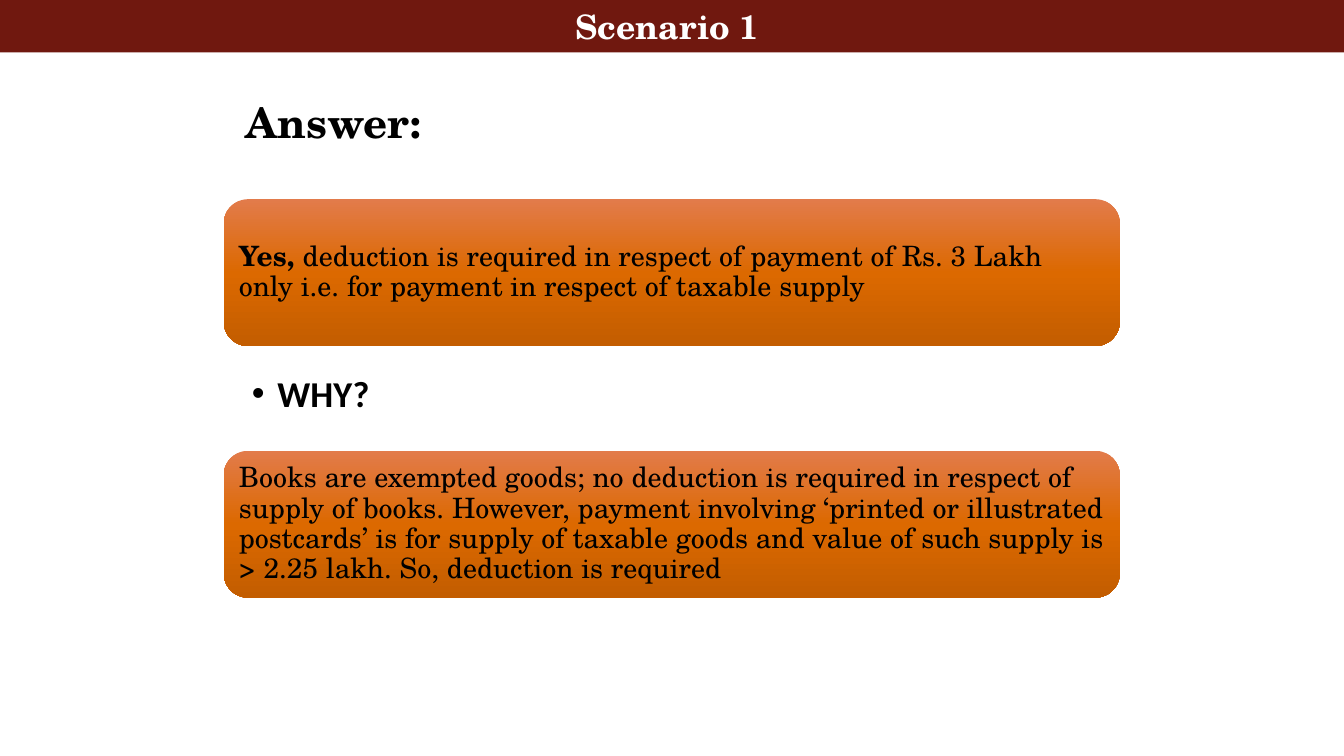
import copy
from dataclasses import dataclass

import pptx
import pptx.util
import pptx.dml.color
import pptx.enum.shapes
import pptx.enum.text
import pptx.oxml.ns
from lxml import etree

Cm = pptx.util.Cm
Pt = pptx.util.Pt
RGB = pptx.dml.color.RGBColor.from_string
SHAPE = pptx.enum.shapes.MSO_SHAPE
ALIGN = pptx.enum.text.PP_ALIGN
ANCHOR = pptx.enum.text.MSO_ANCHOR


@dataclass(frozen=True)
class Theme:
    serif: str = "TeX Gyre Schola"
    sans: str = "Calibri"
    ink: str = "000000"
    white: str = "FFFFFF"
    band: str = "70180F"
    card: tuple = ("E27B4B", "DC6900", "C35D00")
    head: int = 30
    why: int = 26
    top: int = 24
    text: int = 20


THEME = Theme()


def place(shape, box):
    shape.left, shape.top, shape.width, shape.height = map(Cm, box)


def frame(shape, inset, anchor):
    text = shape.text_frame
    text.word_wrap = True
    text.auto_size = pptx.enum.text.MSO_AUTO_SIZE.NONE
    text.vertical_anchor = anchor
    text.margin_left, text.margin_top, text.margin_right, text.margin_bottom = map(Cm, inset)
    return text.paragraphs[0]


def style(para, size, name=THEME.serif, color=THEME.ink, bold=None,
          align=ALIGN.LEFT, line=0.9, after=0):
    para.alignment = align
    para.line_spacing = line
    para.space_before = Pt(0)
    para.space_after = Pt(after)
    font = para.font
    font.name, font.size, font.bold = name, Pt(size), bold
    font.color.rgb = RGB(color)


def add_shape(slide, kind, box):
    shape = slide.shapes.add_shape(kind, *map(Cm, box))
    shape.shadow.inherit = False
    shape.line.fill.background()
    return shape


# Band across the top
def add_band(slide, box, words):
    band = add_shape(slide, SHAPE.RECTANGLE, box)
    band.fill.solid()
    band.fill.fore_color.rgb = RGB(THEME.band)
    para = frame(band, (0, 0.15, 0, 0.15), ANCHOR.MIDDLE)
    para.text = words
    style(para, THEME.top, color=THEME.white, bold=True, align=ALIGN.CENTER, line=1)


# Heading in the title placeholder
def add_head(slide, box, words):
    head = slide.shapes.title
    place(head, box)
    para = frame(head, (0.25, 0.13, 0.25, 0.13), ANCHOR.MIDDLE)
    para.text = words
    style(para, THEME.head, bold=True)


# Rounded card with a three-stop gradient
def add_card(slide, box, runs):
    card = add_shape(slide, SHAPE.ROUNDED_RECTANGLE, box)
    card.fill.gradient()
    card.fill.gradient_angle = 270
    first = card.element.find(".//" + pptx.oxml.ns.qn("a:gs"))
    first.addnext(copy.deepcopy(first))
    for i, (stop, color) in enumerate(zip(card.fill.gradient_stops, THEME.card)):
        stop.position = i / 2
        stop.color.rgb = RGB(color)
    para = frame(card, (0.2,) * 4, ANCHOR.MIDDLE)
    style(para, THEME.text, after=7)
    for words, bold in runs:
        run = para.add_run()
        run.text = words
        run.font.bold = bold


# Bulleted question in the body placeholder
def add_why(slide, box, words):
    body = slide.placeholders[1]
    place(body, box)
    para = frame(body, (0.71, 0.1, 0.51, 0.1), ANCHOR.TOP)
    para.text = words
    props = para._p.get_or_add_pPr()
    props.set("marL", str(Cm(0.64)))
    props.set("indent", str(-Cm(0.64)))
    etree.SubElement(props, pptx.oxml.ns.qn("a:buChar")).set("char", "•")
    style(para, THEME.why, name=THEME.sans, bold=True, after=5)


def main():
    deck = pptx.Presentation()
    deck.slide_width, deck.slide_height = Cm(33.87), Cm(19.05)
    slide = deck.slides.add_slide(deck.slide_layouts[1])
    left, wide, high = 5.64, 22.58, 3.7

    add_head(slide, (5.94, 1.32, 29.21, 3.68), "Answer:")
    add_card(slide, (left, 5.02, wide, high), [
        ("Yes, ", True),
        ("deduction is required in respect of payment of Rs. 3 Lakh only "
         "i.e. for payment in respect of taxable supply", False),
    ])
    add_why(slide, (left, 9.37, wide, 3), "WHY?")
    add_card(slide, (left, 11.36, wide, high), [
        ("Books are exempted goods; no deduction is required in respect of "
         "supply of books. However, payment involving ‘printed or illustrated "
         "postcards’ is for supply of taxable goods and value of such supply "
         "is > 2.25 lakh. So, deduction is required", False),
    ])
    add_band(slide, (0, 0, 33.87, 1.32), "Scenario 1 ")
    deck.save("out.pptx")


if __name__ == "__main__":
    main()
